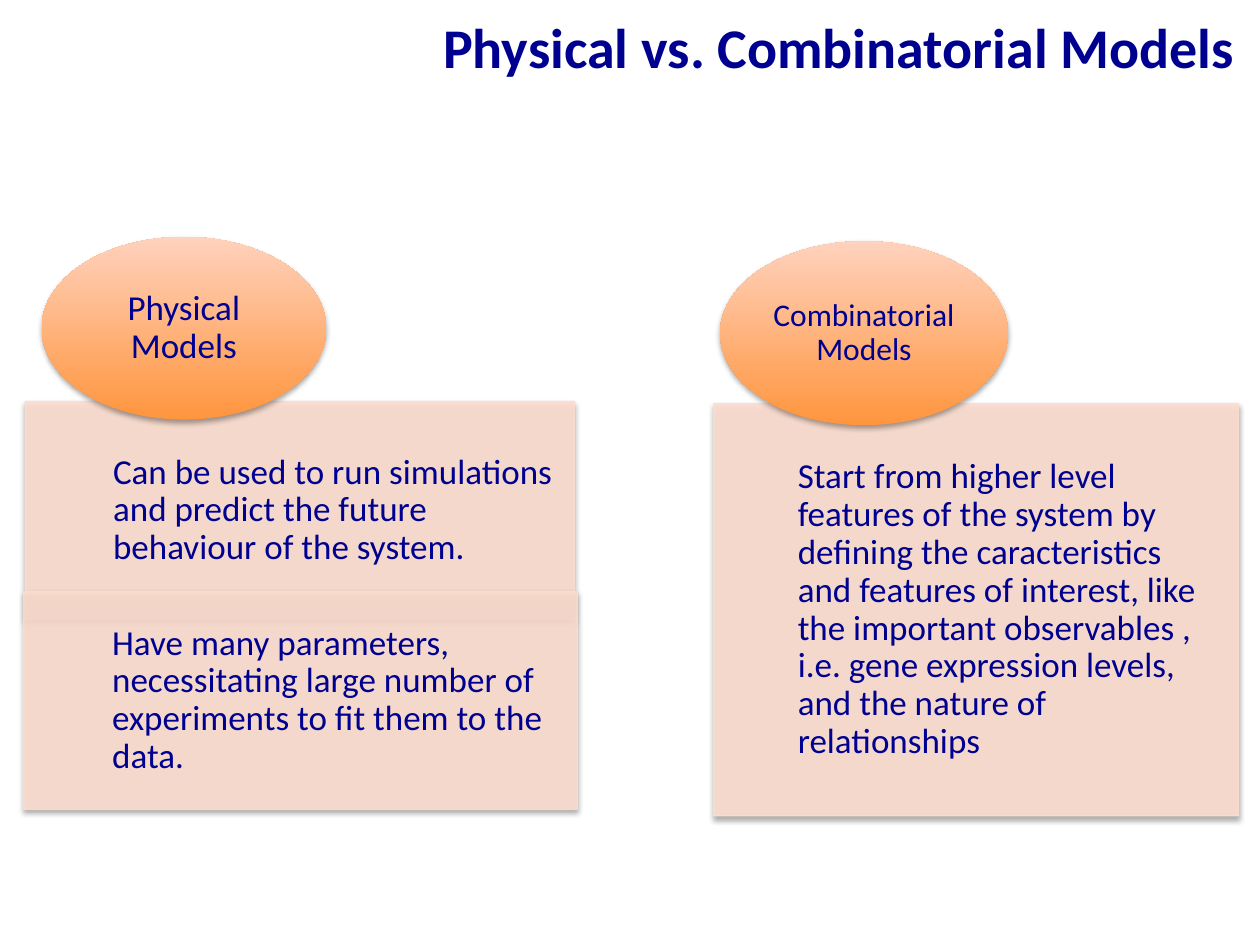
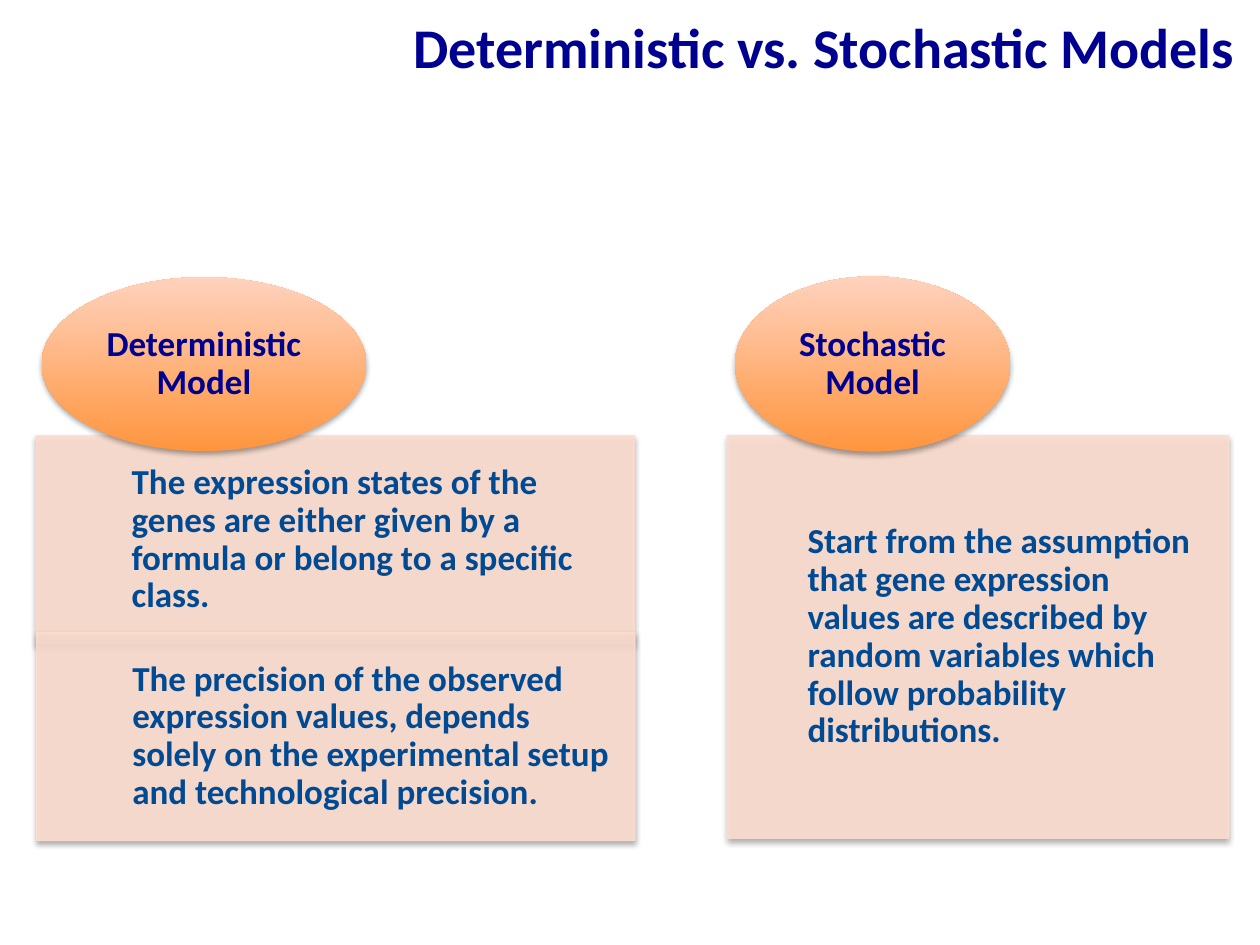
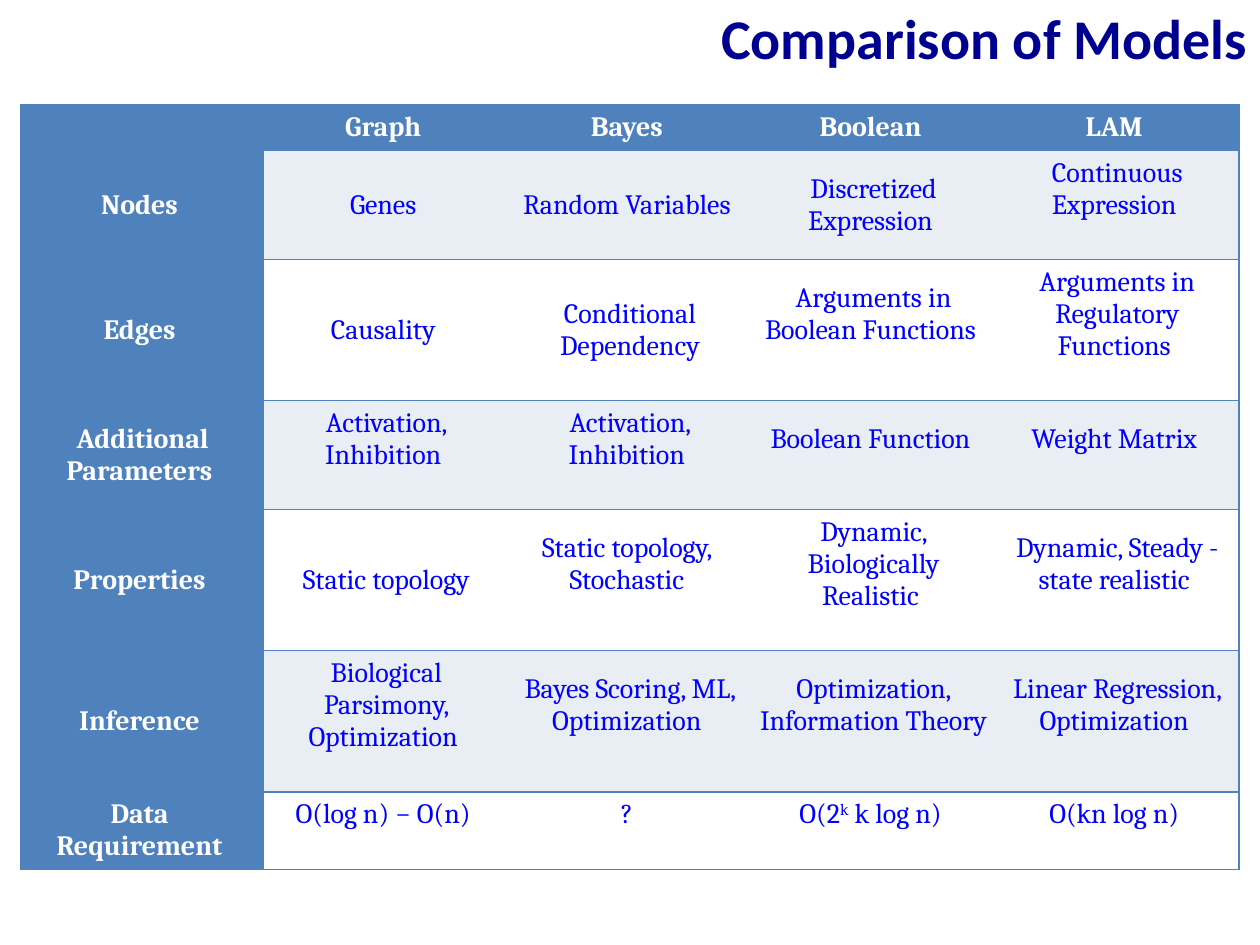
"""Build three slides that compare kinds of gene network models."""
from lxml import etree
from pptx import Presentation, util as u
from pptx.dml.color import RGBColor
from pptx.enum import shapes, text
from pptx.oxml import ns, parse_xml


class Theme:
    navy, steel, blue, white = "000090", "004A94", "0000FF", "FFFFFF"
    panel, glow, peach = "FCDDCF", "FF953E", "FFD2BD"
    header, band = "4F81BD", "E9EDF4"
    sans, serif = "Calibri", "Cambria"
    title_size, body_size, small_size, table_size = 32, 20, 18, 16
    opacity = 90
    hairline = 0.75


SHADOW = (
    f'<a:effectLst {ns.nsdecls("a")}><a:outerShdw blurRad="40000" dist="23000" dir="5400000" '
    'rotWithShape="0"><a:srgbClr val="000000"><a:alpha val="35000"/></a:srgbClr>'
    '</a:outerShdw></a:effectLst>'
)

deck = Presentation()
deck.slide_width, deck.slide_height = u.Inches(10), u.Inches(7.5)
COL, ROW = deck.slide_width / 100, deck.slide_height / 75
blank = deck.slide_layouts[6]


def write(frame, wording, size, color, bold=False, font=Theme.sans,
          align=text.PP_ALIGN.CENTER, spacing=1.0):
    """Fill a frame; a line feed starts a paragraph, carets enclose a superscript."""
    for number, line in enumerate(wording.split("\n")):
        paragraph = frame.add_paragraph() if number else frame.paragraphs[0]
        paragraph.alignment, paragraph.line_spacing = align, spacing
        for part, piece in enumerate(line.split("^")):
            run = paragraph.add_run()
            run.text = piece
            look = {"name": font, "size": u.Pt(size), "bold": bold}
            for key, value in look.items():
                setattr(run.font, key, value)
            run.font.color.rgb = RGBColor.from_string(color)
            if part % 2:
                run._r.get_or_add_rPr().set("baseline", "30000")


def place(slide, kind, left, top, width, height, insets):
    """Add a shadowed shape on the grid with the given text insets."""
    shape = slide.shapes.add_shape(kind, int(left * COL), int(top * ROW),
                                   int(width * COL), int(height * ROW))
    sides = ("margin_left", "margin_top", "margin_right", "margin_bottom")
    layout = dict(zip(sides, (int(inset * COL) for inset in insets)))
    layout |= {"word_wrap": True, "vertical_anchor": text.MSO_ANCHOR.MIDDLE}
    for key, value in layout.items():
        setattr(shape.text_frame, key, value)
    return shape


comparisons = [
    ("Physical vs. Combinatorial Models ", False, Theme.navy, [
        ("Physical Models", Theme.body_size, (3.3, 18.8, 22.6, 14.5), [
            ("Can be used to run simulations and predict the future behaviour of the system.",
             (2, 31.87, 43.6, 17.3)),
            ("Have many parameters, necessitating large number of experiments to fit them "
             "to the data.", (1.87, 46.95, 43.95, 17.3))]),
        ("Combinatorial Models", Theme.small_size, (57.15, 19.15, 22.85, 14.6), [
            ("Start from higher level features of the system by defining the caracteristics "
             "and features of interest, like the important observables , i.e. gene expression "
             "levels, and the nature of relationships", (56.65, 32.05, 41.65, 32.7))]),
    ]),
    ("Deterministic vs. Stochastic Models ", True, Theme.steel, [
        ("Deterministic Model", Theme.body_size, (3.3, 22, 25.77, 13.8), [
            ("The expression states of the genes are either given by a formula or belong to "
             "a specific class.", (2.85, 34.6, 47.5, 16.5)),
            ("The precision of the observed expression values, depends solely on the "
             "experimental setup and technological precision.", (2.9, 50.2, 47.5, 16.5))]),
        ("Stochastic Model", Theme.body_size, (58.33, 21.94, 21.85, 13.9), [
            ("Start from the assumption that gene expression values are described by random "
             "variables which follow probability distributions.",
             (57.73, 34.6, 39.8, 31.93))]),
    ]),
]
titles = [(comparison[0], 6.8, 1.1, text.MSO_ANCHOR.BOTTOM) for comparison in comparisons]
titles.append(("Comparison of Models", 5.9, 1.0, text.MSO_ANCHOR.MIDDLE))

for heading, height, spacing, anchor in titles:
    slide = deck.slides.add_slide(blank)
    title = slide.shapes.add_textbox(0, 0, deck.slide_width, int(height * ROW)).text_frame
    title.word_wrap, title.vertical_anchor = True, anchor
    write(title, heading, Theme.title_size, Theme.navy, True,
          align=text.PP_ALIGN.RIGHT, spacing=spacing)

for slide, (_, bold, ink, models) in zip(deck.slides, comparisons):
    for model, size, oval_area, traits in models:
        for trait, area in traits:
            panel = place(slide, shapes.MSO_SHAPE.RECTANGLE, *area,
                          (0.16 * area[2], 1.6, 1.6, 1.6))
            panel.fill.solid()
            panel.line.width = u.Pt(Theme.hairline)
            for paint in (panel.fill.fore_color, panel.line.color):
                paint.rgb = RGBColor.from_string(Theme.panel)
            for tone in panel._element.spPr.iter(ns.qn("a:srgbClr")):
                etree.SubElement(tone, ns.qn("a:alpha")).set("val", str(Theme.opacity * 1000))
            panel._element.spPr.append(parse_xml(SHADOW))
            write(panel.text_frame, trait, Theme.body_size, ink, bold,
                  align=text.PP_ALIGN.LEFT, spacing=0.9)
        oval = place(slide, shapes.MSO_SHAPE.OVAL, *oval_area, (0, 0, 0, 0))
        oval.fill.gradient()
        oval.fill.gradient_angle = 90
        for stop, color, position in zip(oval.fill.gradient_stops,
                                         (Theme.glow, Theme.peach), (0, 1)):
            stop.color.rgb = RGBColor.from_string(color)
            stop.position = position
        oval.line.fill.background()
        oval._element.spPr.append(parse_xml(SHADOW))
        write(oval.text_frame, model, size, Theme.navy, bold, spacing=0.9)

properties = [
    ("", "Graph ", "Bayes ", "Boolean ", "LAM "),
    ("Nodes ", "Genes ", "Random Variables ", "Discretized Expression ",
     "Continuous Expression "),
    ("Edges ", "Causality ", "Conditional Dependency", "Arguments in Boolean Functions ",
     "Arguments in Regulatory Functions "),
    ("Additional Parameters ", "Activation, Inhibition ", "Activation, Inhibition ",
     "Boolean Function ", "Weight Matrix "),
    ("Properties ", "Static topology", "Static topology, \nStochastic ",
     "Dynamic, Biologically Realistic ", "Dynamic, Steady - state realistic "),
    ("Inference ", "Biological Parsimony, Optimization ", "Bayes Scoring, ML, Optimization ",
     "Optimization, Information Theory ", "Linear Regression, Optimization "),
    ("Data \nRequirement ", "O(log n) − O(n) ", "? ", "O(2^k^ k log n) ", "O(kn log n) "),
]
centred = {"Genes ", "Random Variables ", "Discretized Expression ", "Causality ",
           "Conditional Dependency", "Static topology"}
row_heights = (3.65, 8.65, 11.2, 8.65, 11.2, 11.2, 6.15)
last = len(properties[0]) - 1

grid = deck.slides[2].shapes.add_table(
    len(properties), last + 1, int(1.65 * COL), int(8.3 * ROW),
    int(96.7 * COL), int(sum(row_heights) * ROW)).table
grid.first_row = grid.horz_banding = False
for r, (entries, height) in enumerate(zip(properties, row_heights)):
    grid.rows[r].height = int(height * ROW)
    for c, entry in enumerate(entries):
        cell = grid.cell(r, c)
        heading = r == 0 or c == 0
        raised = not heading and entry not in centred
        padding = 0.35 if entry else 0
        layout = {"margin_left": 0.5, "margin_right": 0.5, "margin_top": padding,
                  "margin_bottom": padding + 2.5 * raised}
        for key, value in layout.items():
            setattr(cell, key, int(value * COL))
        cell.vertical_anchor = text.MSO_ANCHOR.MIDDLE
        write(cell.text_frame, entry, Theme.table_size,
              Theme.white if heading else Theme.blue, heading, Theme.serif)
        borders = {"lnL": c == 0, "lnR": c == last, "lnT": True, "lnB": True}
        for side, ruled in borders.items():
            edge = etree.SubElement(cell._tc.get_or_add_tcPr(), ns.qn(f"a:{side}"))
            edge.set("w", str(u.Pt(1)))
            if ruled:
                paint = etree.SubElement(edge, ns.qn("a:solidFill"))
                etree.SubElement(paint, ns.qn("a:srgbClr")).set("val", Theme.header)
            else:
                etree.SubElement(edge, ns.qn("a:noFill"))
        cell.fill.solid()
        cell.fill.fore_color.rgb = RGBColor.from_string(
            Theme.header if heading else Theme.band if r % 2 else Theme.white)

deck.save("out.pptx")
